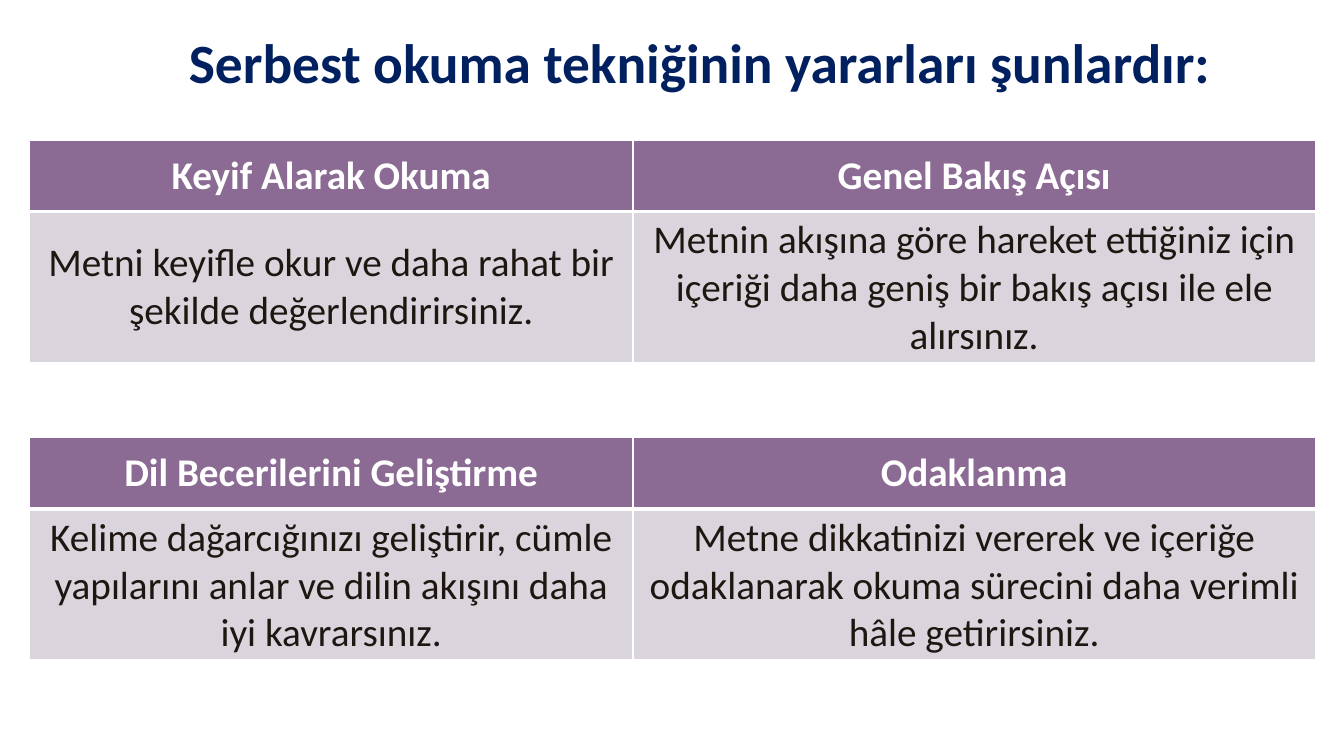
from lxml.etree import SubElement as Sub
from pptx import Presentation
from pptx.dml.color import RGBColor as Rgb
from pptx.enum.text import MSO_ANCHOR as Anchor, PP_ALIGN as Align
from pptx.oxml.ns import qn
from pptx.util import Cm, Pt

COLORS = {"navy": "002060", "plum": "8B6A94", "mist": "DAD4DC",
          "ink": "1D1611", "white": "FFFFFF"}
FONT = "Calibri"
LEFT = 0.74
WIDTHS = [15.21, 17.2]
HEIGHTS = [1.8, 3.81]

TABLES = [
    (3.53, [
        ["Keyif Alarak Okuma", "Genel Bakış Açısı"],
        ["Metni keyifle okur ve daha rahat bir şekilde değerlendirirsiniz.",
         "Metnin akışına göre hareket ettiğiniz için içeriği daha geniş "
         "bir bakış açısı ile ele alırsınız."],
    ]),
    (11.02, [
        ["Dil Becerilerini Geliştirme", "Odaklanma"],
        ["Kelime dağarcığınızı geliştirir, cümle yapılarını anlar ve "
         "dilin akışını daha iyi kavrarsınız.",
         "Metne dikkatinizi vererek ve içeriğe odaklanarak okuma "
         "sürecini daha verimli hâle getirirsiniz."],
    ]),
]


def write(frame, text, size=28, color="ink", bold=False, space=1.0):
    para = frame.paragraphs[0]
    para.alignment = Align.CENTER
    para.line_spacing = space
    run = para.add_run()
    run.text = text
    run.font.name = FONT
    run.font.size = Pt(size)
    run.font.bold = bold
    run.font.color.rgb = Rgb.from_string(COLORS[color])


def edge(cell, side, width):
    """Draw a white border on one side of a cell; call before the fill."""
    line = Sub(cell._tc.get_or_add_tcPr(), qn(f"a:ln{side}"), w=str(Pt(width)))
    fill = Sub(line, qn("a:solidFill"))
    Sub(fill, qn("a:srgbClr"), val=COLORS["white"])


prs = Presentation()
prs.slide_width = Cm(33.87)
prs.slide_height = Cm(19.05)
slide = prs.slides.add_slide(prs.slide_layouts[6])

title = slide.shapes.add_textbox(Cm(2.54), Cm(0.91), Cm(30.2), Cm(1.65))
frame = title.text_frame
frame.word_wrap = True
frame.vertical_anchor = Anchor.BOTTOM
frame.margin_left = frame.margin_right = Cm(0.33)
frame.margin_top = frame.margin_bottom = Cm(0.18)
write(frame, "Serbest okuma tekniğinin yararları şunlardır:",
      size=39.6, color="navy", bold=True, space=0.85)

for top, rows in TABLES:
    table = slide.shapes.add_table(
        len(rows), len(WIDTHS), Cm(LEFT), Cm(top),
        Cm(sum(WIDTHS)), Cm(sum(HEIGHTS))).table
    for col, width in zip(table.columns, WIDTHS):
        col.width = Cm(width)
    for i, texts in enumerate(rows):
        head = i == 0
        table.rows[i].height = Cm(HEIGHTS[i])
        for j, text in enumerate(texts):
            cell = table.cell(i, j)
            cell.vertical_anchor = Anchor.MIDDLE
            for side in "LRTB":
                thick = (head and side == "B") or (not head and side == "T")
                edge(cell, side, 3 if thick else 1)
            cell.fill.solid()
            cell.fill.fore_color.rgb = Rgb.from_string(
                COLORS["plum" if head else "mist"])
            write(cell.text_frame, text, bold=head,
                  color="white" if head else "ink")

prs.save("out.pptx")
